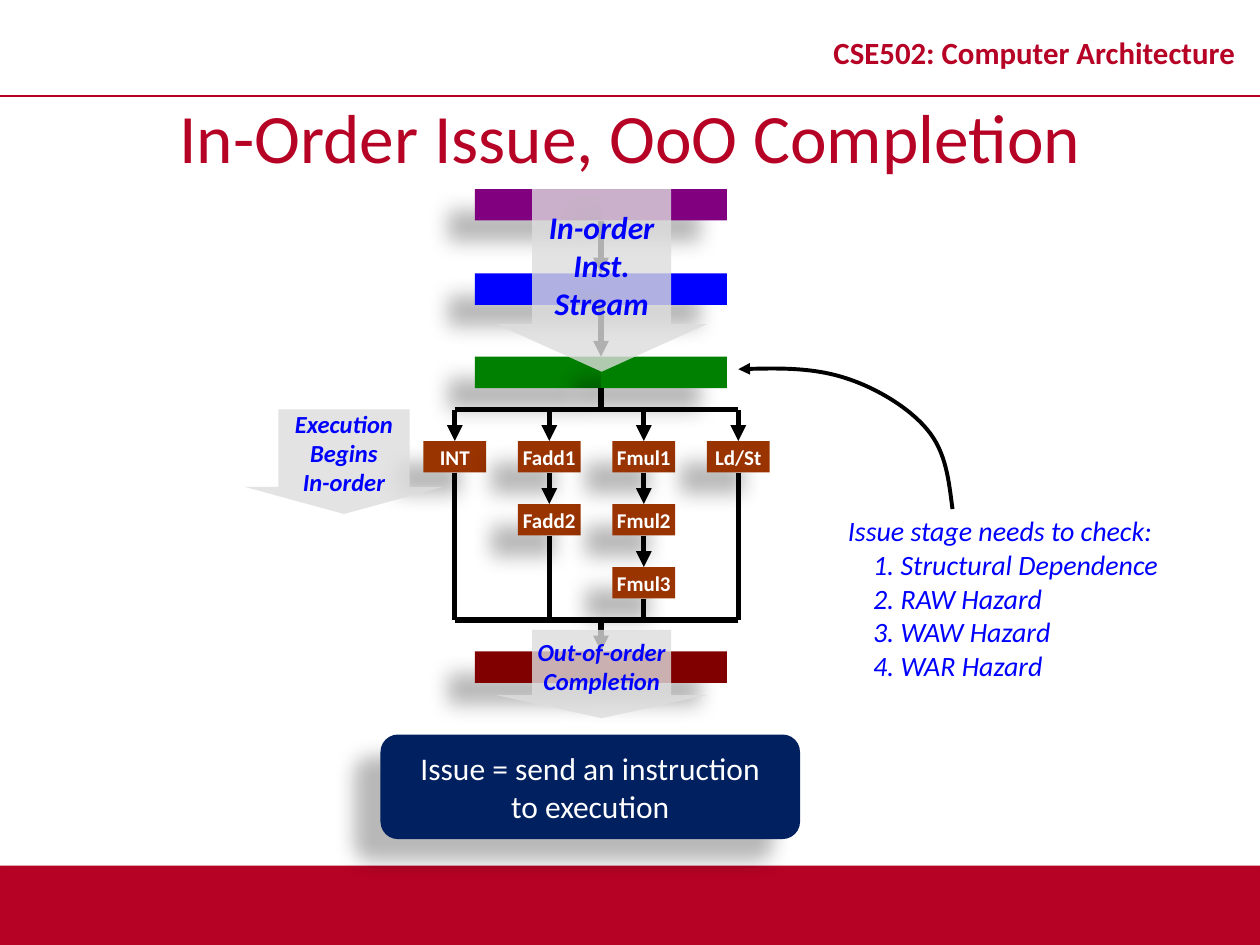
from dataclasses import dataclass

from lxml.etree import SubElement
from pptx import Presentation
from pptx.dml.color import RGBColor
from pptx.enum.shapes import MSO_CONNECTOR, MSO_SHAPE
from pptx.enum.text import MSO_ANCHOR, MSO_AUTO_SIZE, PP_ALIGN
from pptx.oxml.ns import qn
from pptx.util import Inches, Pt


@dataclass(frozen=True)
class Theme:
    font: str = "Calibri"
    red: str = "B60225"
    blue: str = "0000FF"
    navy: str = "002060"
    brown: str = "993300"
    maroon: str = "800000"
    purple: str = "800080"
    green: str = "008000"
    gray: str = "DDDDDD"
    black: str = "000000"
    white: str = "FFFFFF"
    title: float = 39.6
    header: float = 17.6
    large: float = 18
    body: float = 16
    small: float = 14
    unit: float = 12


theme = Theme()
BLOCK_SHADOW = (28, 11.8, 19.7, 141)  # opacity %, blur pt, distance pt, angle
FOOTER_SHADOW = (35, 3.1, 1.8, 90)


def add_block(kind, box, fill, lines=(), size=12, color=theme.white, bold=False,
              italic=False, shadow=None, opacity=100):
    """Add a borderless filled shape with centred lines of text."""
    block = slide.shapes.add_shape(kind, *map(Inches, box))
    block.fill.solid()
    block.fill.fore_color.rgb = RGBColor.from_string(fill)
    block.line.fill.background()
    block.shadow.inherit = False
    properties = block._element.spPr
    if opacity < 100:
        fill_color = properties.find(qn("a:solidFill"))[0]
        SubElement(fill_color, qn("a:alpha"), val=str(opacity * 1000))
    if shadow:
        alpha, blur, distance, angle = shadow
        outer = SubElement(properties.find(qn("a:effectLst")), qn("a:outerShdw"),
                           blurRad=str(Pt(blur)), dist=str(Pt(distance)),
                           dir=str(angle * 60000), algn="ctr", rotWithShape="0")
        shadow_color = SubElement(outer, qn("a:srgbClr"), val=theme.black)
        SubElement(shadow_color, qn("a:alpha"), val=str(alpha * 1000))
    if lines:
        frame = block.text_frame
        frame.word_wrap = False
        frame.vertical_anchor = MSO_ANCHOR.MIDDLE
        frame.text = "\n".join(lines)
        for paragraph in frame.paragraphs:
            paragraph.alignment = PP_ALIGN.CENTER
            font = paragraph.font
            font.name, font.size, font.bold, font.italic = theme.font, Pt(size), bold, italic
            font.color.rgb = RGBColor.from_string(color)
    return block


def add_line(start, end, arrow=False, color=theme.black, width=3):
    line = slide.shapes.add_connector(MSO_CONNECTOR.STRAIGHT, *map(Inches, start + end))
    line.line.color.rgb = RGBColor.from_string(color)
    line.line.width = Pt(width)
    if arrow:
        SubElement(line.line._get_or_add_ln(), qn("a:tailEnd"), type="triangle")
    SubElement(line._element.spPr, qn("a:effectLst"))
    return line


presentation = Presentation()
presentation.slide_width = Inches(10)
presentation.slide_height = Inches(7.5)
slide = presentation.slides.add_slide(presentation.slide_layouts[5])

# Footer band, header and title
add_block(MSO_SHAPE.RECTANGLE, (0, 6.87, 10, 0.63), theme.red, shadow=FOOTER_SHADOW)
add_line((0, 0.76), (10, 0.76), color=theme.red, width=1)

header = slide.shapes.add_textbox(Inches(6.42), Inches(0.13), Inches(3.58), Inches(0.63))
header.text_frame.text = "CSE502: Computer Architecture"
header.text_frame.paragraphs[0].line_spacing = 0.8
title = slide.shapes.title
title.left, title.top, title.width, title.height = map(Inches, (0, 0.76, 10, 0.63))
title.text_frame.text = "In-Order Issue, OoO Completion"
for shape, size, bold in ((header, theme.header, True), (title, theme.title, False)):
    frame = shape.text_frame
    frame.word_wrap = True
    frame.auto_size = MSO_AUTO_SIZE.NONE
    frame.vertical_anchor = MSO_ANCHOR.MIDDLE
    paragraph = frame.paragraphs[0]
    paragraph.alignment = PP_ALIGN.CENTER
    font = paragraph.font
    font.name, font.size, font.bold = theme.font, Pt(size), bold
    font.color.rgb = RGBColor.from_string(theme.red)

# Curved arrow from the checklist to the issue stage: three points per Bezier segment
curve_points = [(7.53, 3.81), (7.51, 3.59), (7.36, 3.41),
                (7.22, 3.24), (6.96, 3.08), (6.71, 3.00),
                (6.46, 2.92), (6.16, 2.92), (5.86, 2.93)]
builder = slide.shapes.build_freeform(Inches(7.56), Inches(4.04))
builder.add_line_segments([(Inches(x), Inches(y)) for x, y in curve_points], close=False)
curve = builder.convert_to_shape()
outline = next(curve._element.iter(qn("a:path")))
segments = outline.findall(qn("a:lnTo"))
for first in range(0, len(segments), 3):
    bezier = SubElement(outline, qn("a:cubicBezTo"))
    for segment in segments[first:first + 3]:
        bezier.append(segment[0])
        outline.remove(segment)
curve.fill.background()
curve.shadow.inherit = False
curve.line.color.rgb = RGBColor.from_string(theme.black)
curve.line.width = Pt(2.25)
SubElement(curve.line._get_or_add_ln(), qn("a:tailEnd"), type="triangle")

# Checklist
checklist = slide.shapes.add_textbox(Inches(6.73), Inches(4.08), Inches(2.54), Inches(1.34))
frame = checklist.text_frame
frame.word_wrap = True
frame.auto_size = MSO_AUTO_SIZE.SHAPE_TO_FIT_TEXT
frame.margin_left = frame.margin_right = frame.margin_top = frame.margin_bottom = 0
frame.text = "\n".join(["Issue stage needs to check:", "1. Structural Dependence",
                        "2. RAW Hazard", "3. WAW Hazard", "4. WAR Hazard"])
for index, paragraph in enumerate(frame.paragraphs):
    if index:
        paragraph._p.get_or_add_pPr().set("marL", str(Inches(0.2)))
    font = paragraph.font
    font.name, font.size, font.italic = theme.font, Pt(theme.body), True
    font.color.rgb = RGBColor.from_string(theme.blue)

add_block(MSO_SHAPE.ROUNDED_RECTANGLE, (3.02, 5.83, 3.33, 0.83), theme.navy,
          ["Issue = send an instruction", "to execution"], theme.large, shadow=BLOCK_SHADOW)

# Pipeline stages, each made of two halves
center = 4.77
for top, color in ((1.5, theme.purple), (2.17, theme.blue),
                   (2.83, theme.green), (5.17, theme.maroon)):
    for left in (center - 1, center):
        add_block(MSO_SHAPE.RECTANGLE, (left, top, 1, 0.25), color, shadow=BLOCK_SHADOW)

# Functional units, one column per pipeline
pipelines = [["INT"], ["Fadd1", "Fadd2"], ["Fmul1", "Fmul2", "Fmul3"], ["Ld/St"]]
columns = [3.61 + 0.75 * index for index in range(len(pipelines))]
units = [[add_block(MSO_SHAPE.RECTANGLE, (x - 0.25, 3.5 + 0.5 * row, 0.5, 0.25),
                    theme.brown, [name], theme.unit, bold=True, shadow=BLOCK_SHADOW)
          for row, name in enumerate(names)]
         for x, names in zip(columns, pipelines)]

# Flow between stages and units
issue_bus, completion_bus = 3.25, 4.92
for start, end, arrow in ((1.75, 2.17, True), (2.42, 2.83, True),
                          (3.08, issue_bus, False), (completion_bus, 5.17, True)):
    add_line((center, start), (center, end), arrow)
for y in (issue_bus, completion_bus):
    add_line((columns[0], y), (columns[-1], y))
for x, pipeline in zip(columns, units):
    add_line((x, issue_bus), (x, 3.5), arrow=True).end_connect(pipeline[0], 0)
    for upper, lower in zip(pipeline, pipeline[1:]):
        link = add_line((x, 3.75), (x, 4), arrow=True)
        link.begin_connect(upper, 2)
        link.end_connect(lower, 0)
    add_line((x, 4.75), (x, completion_bus)).begin_connect(pipeline[-1], 2)

# Translucent block arrows
for box, lines, size in (
        ((3.94, 1.5, 1.67, 1.45), ["In-order", "Inst.", "Stream"], theme.large),
        ((1.94, 3.25, 1.58, 0.83), ["Execution", "Begins", "In-order"], theme.small),
        ((3.94, 5, 1.67, 0.7), ["Out-of-order", "Completion"], theme.small)):
    block_arrow = add_block(MSO_SHAPE.DOWN_ARROW, box, theme.gray, lines, size, theme.blue,
                            bold=True, italic=True, opacity=80)
    block_arrow.adjustments[0] = 0.66
    block_arrow.adjustments[1] = 0.26

presentation.save("out.pptx")
